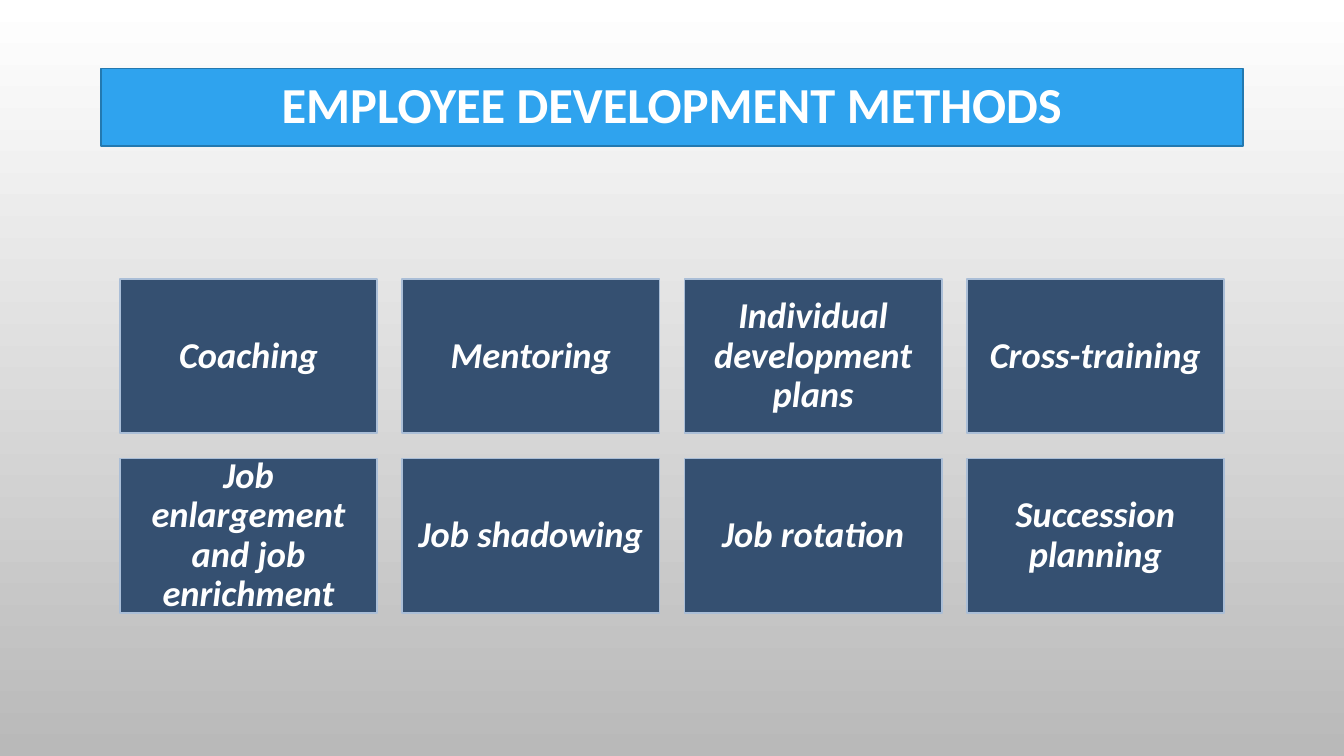
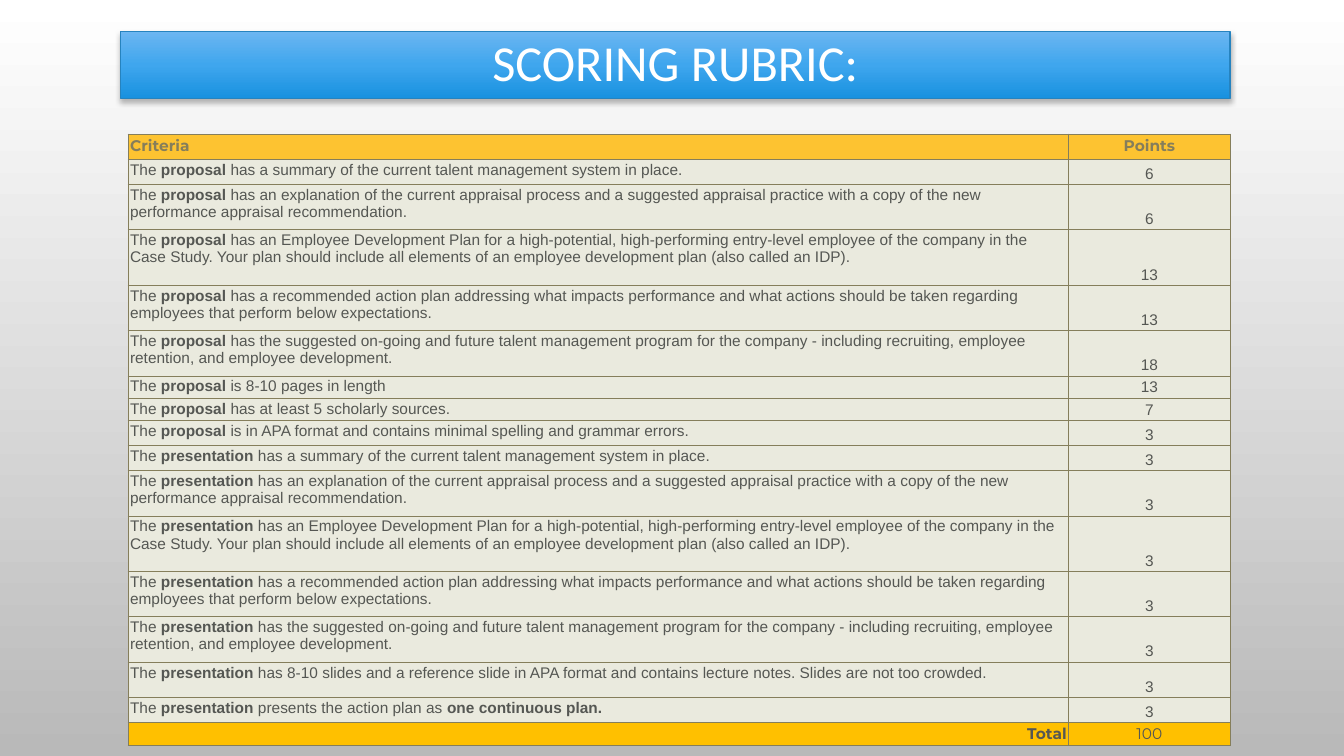
from dataclasses import dataclass

from lxml import etree
from pptx import Presentation
from pptx.dml.color import RGBColor
from pptx.enum.shapes import MSO_SHAPE
from pptx.enum.text import MSO_ANCHOR, PP_ALIGN
from pptx.oxml.ns import qn
from pptx.util import Emu, Pt

RECTANGLE = MSO_SHAPE.RECTANGLE
LEFT, CENTER, RIGHT = PP_ALIGN.LEFT, PP_ALIGN.CENTER, PP_ALIGN.RIGHT
TOP, MIDDLE, BOTTOM = MSO_ANCHOR.TOP, MSO_ANCHOR.MIDDLE, MSO_ANCHOR.BOTTOM
EMU_PER_PX = 9144
BLANK_LAYOUT = 6


@dataclass(frozen=True)
class Theme:
    """Colours, fonts and type sizes shared by the slides."""
    background: tuple = ((0, "FFFFFF"), (100, "B9B9B9"))
    banner: str = "2FA3EE"
    banner_line: str = "2379B0"
    glossy_banner: tuple = ((0, "6CB6F1"), (50, "3FA6EE"), (100, "1891DF"))
    glossy_line: str = "2683BF"
    tile: str = "355071"
    tile_line: str = "AABED7"
    white: str = "FFFFFF"
    shadow: str = "000000"
    grid: str = "857E5B"
    header: str = "FDC331"
    body: str = "EAEADE"
    total: str = "FFC000"
    ink: str = "555753"
    heading_font: str = "Calibri"
    body_font: str = "Arial"
    label_font: str = "Montserrat"
    title_size: int = 36
    tile_size: int = 26
    table_size: int = 11


THEME = Theme()

METHODS = (
    ("Coaching", "Mentoring", "Individual development plans", "Cross-training"),
    ("Job enlargement and job enrichment", "Job shadowing", "Job rotation", "Succession planning"),
)

SHARED_CRITERIA = (
    ("has a summary of the current talent management system in place.", 25),
    ("has an explanation of the current appraisal process and a suggested appraisal practice "
     "with a copy of the new performance appraisal recommendation.", 45),
    ("has an Employee Development Plan for a high-potential, high-performing entry-level employee "
     "of the company in the Case Study. Your plan should include all elements of an employee "
     "development plan (also called an IDP).", 55),
    ("has a recommended action plan addressing what impacts performance and what actions should "
     "be taken regarding employees that perform below expectations.", 45),
    ("has the suggested on-going and future talent management program for the company - including "
     "recruiting, employee retention, and employee development.", 45),
)
PROPOSAL_CRITERIA = SHARED_CRITERIA + (
    ("is 8-10 pages in length", 22),
    ("has at least 5 scholarly sources.", 22),
    ("is in APA format and contains minimal spelling and grammar errors.", 25),
)
PRESENTATION_CRITERIA = SHARED_CRITERIA + (
    ("has 8-10 slides and a reference slide in APA format and contains lecture notes. "
     "Slides are not too crowded.", 35),
    ("presents the action plan as ", 25, "one continuous plan."),
)
RUBRIC = (
    ("proposal", PROPOSAL_CRITERIA, (6, 6, 13, 13, 18, 13, 7, 3)),
    ("presentation", PRESENTATION_CRITERIA, (3,) * 7),
)


def px(length):
    """Turn whole pixels into EMU."""
    return Emu(length * EMU_PER_PX)


def rgb(color):
    """Turn a hex string into a colour."""
    return RGBColor.from_string(color)


def paint(fill, color):
    """Give a fill one solid colour."""
    fill.solid()
    fill.fore_color.rgb = rgb(color)


def paint_gradient(fill, element, stops):
    """Give a fill a gradient running from top to bottom."""
    fill.gradient()
    fill.gradient_angle = 270
    stop_list = element.find(".//" + qn("a:gsLst"))
    for stop in list(stop_list):
        stop_list.remove(stop)
    for percent, color in stops:
        stop = etree.SubElement(stop_list, qn("a:gs"), pos=str(percent * 1000))
        etree.SubElement(stop, qn("a:srgbClr"), val=color)


def add_shadow(shape, color, opacity, blur, distance):
    """Cast a soft shadow straight down."""
    effects = shape.element.spPr.find(qn("a:effectLst"))
    shadow = etree.SubElement(effects, qn("a:outerShdw"), blurRad=str(Pt(blur)),
                              dist=str(Pt(distance)), dir="5400000", rotWithShape="0")
    shade = etree.SubElement(shadow, qn("a:srgbClr"), val=color)
    etree.SubElement(shade, qn("a:alpha"), val=str(opacity * 1000))


def add_span(para, text, size, font, color, bold=False, italic=False):
    """Add one formatted run to a paragraph."""
    span = para.add_run()
    span.text = text
    span.font.size = Pt(size)
    span.font.name = font
    span.font.bold = bold
    span.font.italic = italic
    span.font.color.rgb = rgb(color)


def add_box(page, bounds, text, size, line, line_width, bold=False, italic=False):
    """Add an outlined rectangle with centred white text."""
    box = page.shapes.add_shape(RECTANGLE, *map(px, bounds))
    box.shadow.inherit = False
    box.line.color.rgb = rgb(line)
    box.line.width = Pt(line_width)
    frame = box.text_frame
    frame.word_wrap = True
    frame.vertical_anchor = MIDDLE
    para = frame.paragraphs[0]
    para.alignment = CENTER
    para.line_spacing = 0.9
    add_span(para, text, size, THEME.heading_font, THEME.white, bold, italic)
    return box


def add_tile(page, left, top, text):
    """Add one development method."""
    tile = add_box(page, (left, top, 255, 153), text, THEME.tile_size,
                   THEME.tile_line, 1.25, bold=True, italic=True)
    paint(tile.fill, THEME.tile)
    frame = tile.text_frame
    frame.margin_left = frame.margin_right = px(11)
    frame.margin_top = frame.margin_bottom = px(11)


def add_page(deck):
    """Add a blank page with the shared background."""
    page = deck.slides.add_slide(deck.slide_layouts[BLANK_LAYOUT])
    paint_gradient(page.background.fill, page.element, THEME.background)
    return page


def add_borders(cell):
    """Draw the grid line on all four sides of a cell."""
    properties = cell._tc.get_or_add_tcPr()
    for side in ("a:lnL", "a:lnR", "a:lnT", "a:lnB"):
        border = etree.SubElement(properties, qn(side), w=str(Pt(0.75)))
        fill = etree.SubElement(border, qn("a:solidFill"))
        etree.SubElement(fill, qn("a:srgbClr"), val=THEME.grid)


def fill_cell(cell, spans, fill, font, color, align=LEFT, anchor=TOP):
    """Write (text, bold) spans into a bordered cell."""
    add_borders(cell)
    paint(cell.fill, fill)
    cell.margin_left = cell.margin_right = px(2)
    cell.margin_top = cell.margin_bottom = px(2)
    cell.vertical_anchor = anchor
    para = cell.text_frame.paragraphs[0]
    para.alignment = align
    for text, bold in spans:
        add_span(para, text, THEME.table_size, font, color, bold)


def rubric_rows():
    """List the height, criterion spans and points of every rubric row."""
    rows = []
    for subject, criteria, scores in RUBRIC:
        for (text, height, *ending), score in zip(criteria, scores):
            spans = [("The ", False), (subject, True), (" " + text, False)]
            spans += [(part, True) for part in ending]
            rows.append((height, spans, score))
    return rows


def add_rubric(page, left, top, widths):
    """Add the scoring table with its header and total."""
    rows = rubric_rows()
    heights = [25] + [height for height, _, _ in rows] + [22]
    bounds = (left, top, sum(widths), sum(heights))
    table = page.shapes.add_table(len(heights), len(widths), *map(px, bounds)).table
    table.first_row = table.horz_banding = False
    for column, width in zip(table.columns, widths):
        column.width = px(width)
    for row, height in zip(table.rows, heights):
        row.height = px(height)

    header = (THEME.header, THEME.label_font, THEME.grid)
    fill_cell(table.cell(0, 0), [("Criteria", True)], *header)
    fill_cell(table.cell(0, 1), [("Points", True)], *header, align=CENTER)
    body = (THEME.body, THEME.body_font, THEME.ink)
    for index, (_, spans, score) in enumerate(rows, start=1):
        fill_cell(table.cell(index, 0), spans, *body)
        fill_cell(table.cell(index, 1), [(str(score), False)], *body, align=CENTER, anchor=BOTTOM)
    total = (THEME.total, THEME.label_font, THEME.ink)
    last = len(heights) - 1
    points = sum(score for _, _, score in rows)
    fill_cell(table.cell(last, 0), [("Total", True)], *total, align=RIGHT)
    fill_cell(table.cell(last, 1), [(str(points), False)], *total, align=CENTER)


def build_methods(deck):
    """Build the page of development methods."""
    page = add_page(deck)
    for row, names in enumerate(METHODS):
        for column, name in enumerate(names):
            add_tile(page, 119 + 280 * column, 277 + 178 * row, name)
    banner = add_box(page, (100, 68, 1133, 77), "EMPLOYEE DEVELOPMENT METHODS",
                     THEME.title_size, THEME.banner_line, 1.25, bold=True)
    paint(banner.fill, THEME.banner)


def build_rubric(deck):
    """Build the page with the scoring rubric."""
    page = add_page(deck)
    banner = add_box(page, (120, 31, 1100, 67), "SCORING RUBRIC:",
                     THEME.title_size, THEME.glossy_line, 0.75)
    paint_gradient(banner.fill, banner.element, THEME.glossy_banner)
    add_shadow(banner, THEME.shadow, opacity=28, blur=4, distance=2)
    add_rubric(page, 127, 133, (933, 160))


def main():
    """Build and save the deck."""
    deck = Presentation()
    deck.slide_width, deck.slide_height = px(1333), px(750)
    build_methods(deck)
    build_rubric(deck)
    deck.save("out.pptx")


if __name__ == "__main__":
    main()
